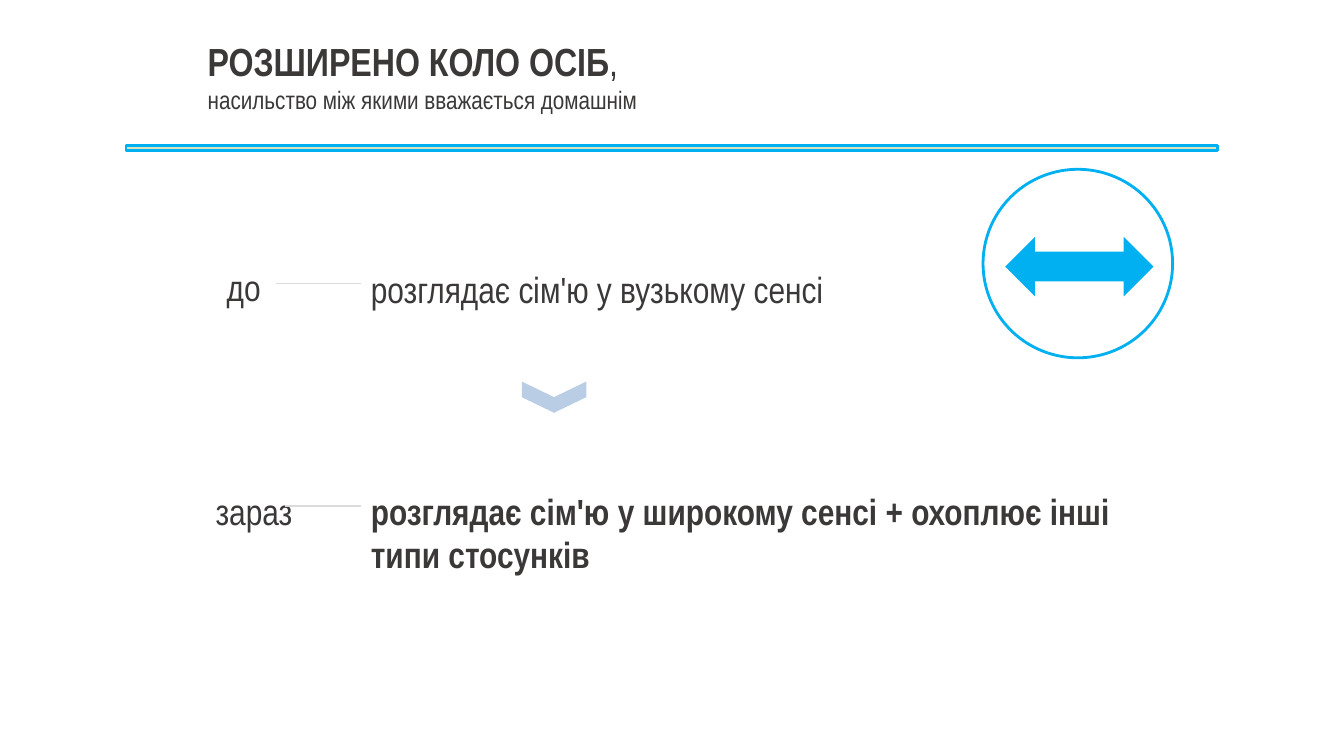
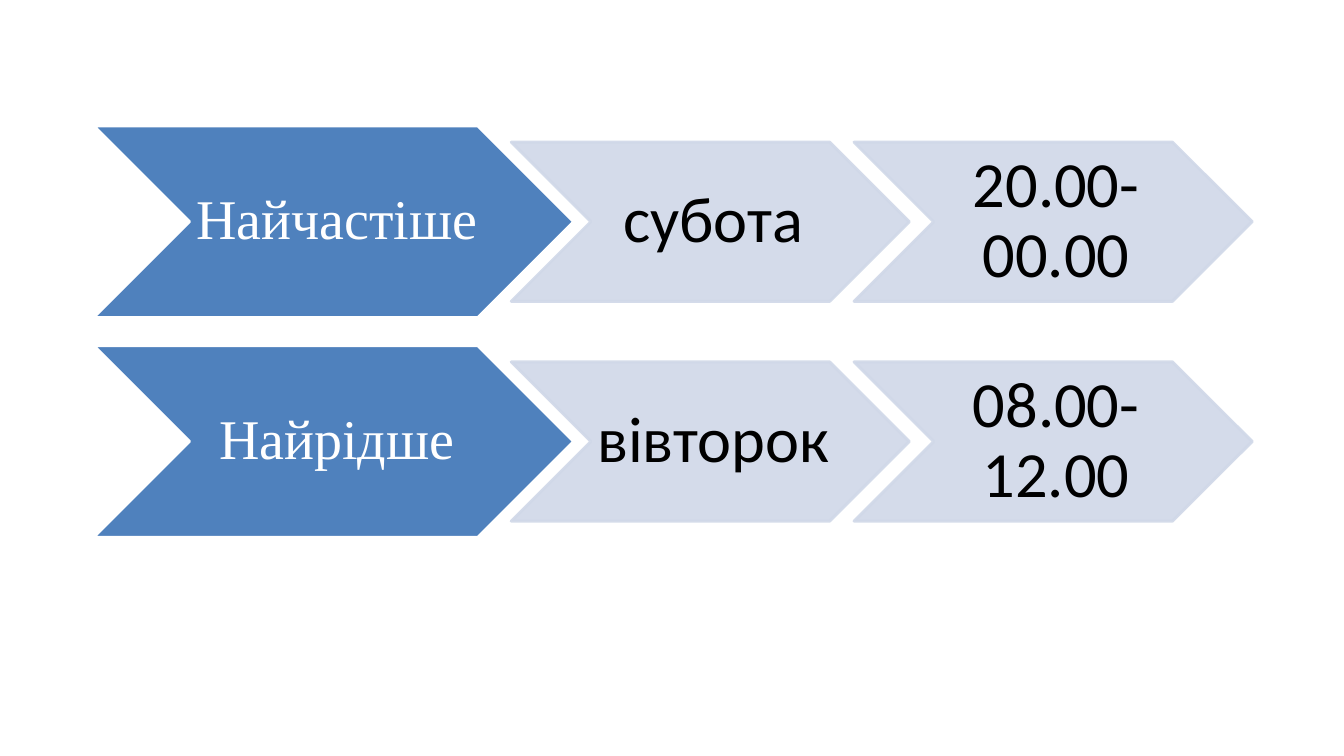
from dataclasses import dataclass

from lxml import etree
from pptx import Presentation
from pptx.dml.color import RGBColor
from pptx.enum.shapes import MSO_CONNECTOR, MSO_SHAPE
from pptx.enum.text import MSO_ANCHOR, MSO_AUTO_SIZE, PP_ALIGN
from pptx.oxml.ns import qn
from pptx.util import Inches, Pt

RECT, OVAL = MSO_SHAPE.RECTANGLE, MSO_SHAPE.OVAL
CHEVRON, ARROW = MSO_SHAPE.CHEVRON, MSO_SHAPE.LEFT_RIGHT_ARROW
STRAIGHT = MSO_CONNECTOR.STRAIGHT
MIDDLE, LEFT, CENTER = MSO_ANCHOR.MIDDLE, PP_ALIGN.LEFT, PP_ALIGN.CENTER
TITLE_ONLY, BLANK = 5, 6


@dataclass(frozen=True)
class Theme:
    ink: str = "3B3838"
    black: str = "000000"
    white: str = "FFFFFF"
    sky: str = "00B0F0"
    green: str = "D7E4BD"
    rule: str = "DBDBDB"
    pale: str = "B9CDE5"
    blue: str = "4F81BD"
    mist: str = "D0D8E8"
    narrow: str = "Arial Narrow"
    serif: str = "Times New Roman"
    sans: str = "Calibri"
    title: int = 28
    sub: int = 18
    body: int = 26
    head: int = 40
    item: int = 46
    edge: int = 2


class Deck:
    def __init__(self, theme):
        self.theme = theme
        self.prs = Presentation()
        self.prs.slide_width = Inches(13.33)
        self.prs.slide_height = Inches(7.5)

    def add(self, layout):
        self.slide = self.prs.slides.add_slide(self.prs.slide_layouts[layout])

    def run(self, para, text, size, color=None, name=None, bold=False):
        run = para.add_run()
        run.text = text
        style = {"size": Pt(size), "name": name or self.theme.narrow, "bold": bold}
        for key, value in style.items():
            setattr(run.font, key, value)
        run.font.color.rgb = RGBColor.from_string(color or self.theme.ink)

    def title(self, box, lines):
        """Fill the title; each line is a list of (text, size, bold)."""
        shape = self.slide.shapes.title
        for key, value in zip(("left", "top", "width", "height"), box):
            setattr(shape, key, Inches(value))
        frame = shape.text_frame
        frame.auto_size = MSO_AUTO_SIZE.NONE
        frame.vertical_anchor = MIDDLE
        for i, line in enumerate(lines):
            para = frame.add_paragraph() if i else frame.paragraphs[0]
            para.alignment = LEFT
            for text, size, bold in line:
                self.run(para, text, size, bold=bold)

    def text(self, box, text, bold=False, wrap=True):
        frame = self.slide.shapes.add_textbox(*map(Inches, box)).text_frame
        frame.word_wrap = wrap
        self.run(frame.paragraphs[0], text, self.theme.body, bold=bold)

    def shape(self, kind, box, fill=None, line=None, turn=0):
        shape = self.slide.shapes.add_shape(kind, *map(Inches, box))
        shape.shadow.inherit = False
        shape.rotation = turn
        for part, color in ((shape.fill, fill), (shape.line.fill, line)):
            if color:
                part.solid()
                part.fore_color.rgb = RGBColor.from_string(color)
            else:
                part.background()
        if line:
            shape.line.width = Pt(self.theme.edge)
        return shape

    def line(self, x1, x2, y):
        line = self.slide.shapes.add_connector(STRAIGHT, *map(Inches, (x1, y, x2, y)))
        line.line.color.rgb = RGBColor.from_string(self.theme.rule)
        line.line.width = Pt(1)
        etree.SubElement(line.element.spPr, qn("a:effectLst"))

    def step(self, box, text, fill, line, font, alpha=100, wrap=False):
        """Draw a labelled chevron; font is (size, color, name)."""
        shape = self.shape(CHEVRON, box, fill, line)
        if alpha < 100:
            for color in shape.element.spPr.iter(qn("a:srgbClr")):
                etree.SubElement(color, qn("a:alpha"), val=str(alpha * 1000))
        frame = shape.text_frame
        style = {
            "word_wrap": wrap, "vertical_anchor": MIDDLE,
            "margin_left": Inches(0.06), "margin_right": 0,
            "margin_top": Inches(0.03), "margin_bottom": Inches(0.03),
        }
        for key, value in style.items():
            setattr(frame, key, value)
        para = frame.paragraphs[0]
        para.alignment = CENTER
        para.line_spacing = 0.9
        self.run(para, text, *font)


def circle(deck):
    t = deck.theme
    deck.add(TITLE_ONLY)
    deck.title((1.96, 0.48, 10.05, 0.54), [
        [("РОЗШИРЕНО КОЛО ОСІБ", t.title, True), (",", t.title, False)],
        [("насильство між якими вважається домашнім", t.sub, False)],
    ])
    deck.shape(RECT, (1.25, 1.44, 10.83, 0.05), t.green, t.sky)
    deck.shape(OVAL, (9.75, 1.68, 1.88, 1.87), line=t.sky)
    deck.shape(ARROW, (9.97, 2.35, 1.47, 0.59), t.sky)

    edge = 3.58
    deck.text((2.15, 2.58, 0.54, 0.54), "до", wrap=False)
    deck.line(2.74, edge, 2.81)
    deck.text((edge, 2.6, 5.46, 0.54), "розглядає сім'ю у вузькому сенсі")
    deck.shape(CHEVRON, (5.34, 3.62, 0.31, 0.64), t.pale, turn=90)
    deck.text((2.04, 4.8, 0.97, 0.54), "зараз", wrap=False)
    deck.line(2.83, edge, 5.02)
    deck.text((edge, 4.8, 7.59, 0.98),
              "розглядає сім'ю у широкому сенсі + охоплює інші типи стосунків", bold=True)


def times(deck):
    t = deck.theme
    deck.add(BLANK)
    head = {"fill": t.blue, "line": t.white, "font": (t.head, t.white, t.serif)}
    item = {"fill": t.mist, "line": t.mist, "alpha": 90,
            "font": (t.item, t.black, t.sans)}
    cols = [
        (0.93, 4.76, 1.9, head),
        (5.07, 3.95, 1.58, item),
        (8.47, 3.95, 1.58, {**item, "wrap": True}),
    ]
    rows = [("Найчастіше", "субота", "20.00-00.00"),
            ("Найрідше", "вівторок", "08.00-12.00")]
    for i, row in enumerate(rows):
        mid = 2.2 + i * 2.18
        for text, (left, width, height, style) in zip(row, cols):
            deck.step((left, mid - height / 2, width, height), text, **style)


def main():
    deck = Deck(Theme())
    circle(deck)
    times(deck)
    deck.prs.save("out.pptx")


if __name__ == "__main__":
    main()
